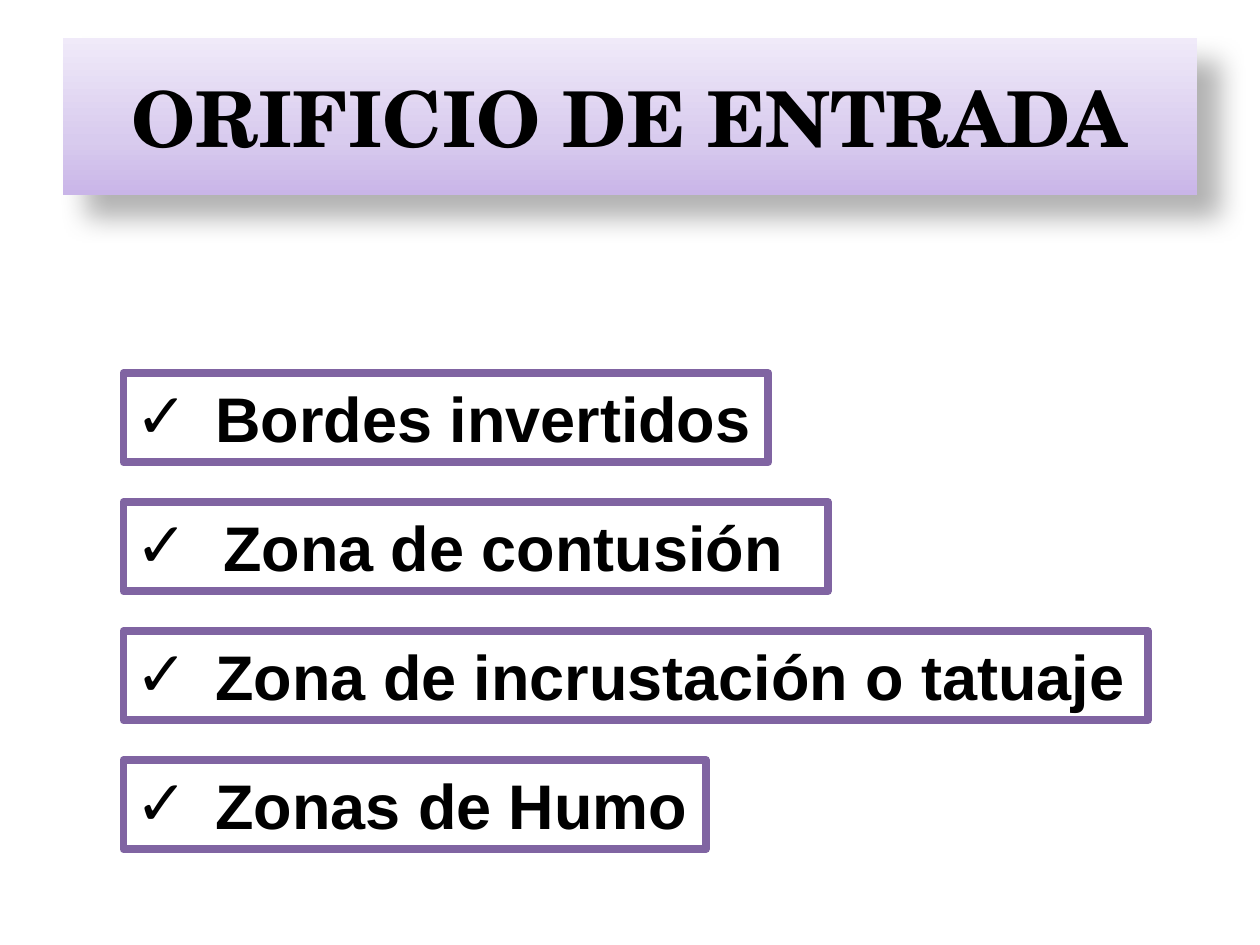
from dataclasses import dataclass

from lxml import etree
from pptx import Presentation
from pptx.dml.color import RGBColor
from pptx.enum.shapes import MSO_SHAPE
from pptx.enum.text import MSO_ANCHOR, PP_ALIGN
from pptx.oxml import parse_xml
from pptx.oxml.ns import qn
from pptx.util import Cm, Pt

RECTANGLE = MSO_SHAPE.RECTANGLE
MIDDLE, TOP = MSO_ANCHOR.MIDDLE, MSO_ANCHOR.TOP
CENTER = PP_ALIGN.CENTER
NAMESPACE = 'xmlns:a="http://schemas.openxmlformats.org/drawingml/2006/main"'


@dataclass(frozen=True)
class Theme:
    ink: str = "000000"
    paper: str = "FFFFFF"
    border: str = "8064A2"
    gradient: tuple = ((0, "C9B5E8"), (35, "D8CBEE"), (100, "F0EAF9"))
    title_font: str = "TeX Gyre Schola"
    body_font: str = "Arial"
    title_size: int = 44
    body_size: int = 36
    border_width: float = 4.5


THEME = Theme()


def write(shape, text, font, size):
    """Put one bold line in the shape and return its paragraph."""
    shape.text_frame.word_wrap = True
    para = shape.text_frame.paragraphs[0]
    para.text = text
    span = para.runs[0]
    span.font.name = font
    span.font.size = Pt(size)
    span.font.bold = True
    span.font.color.rgb = RGBColor.from_string(THEME.ink)
    return para


def add_gradient_and_shadow(shape):
    stops = "".join(
        f'<a:gs pos="{percent * 1000}"><a:srgbClr val="{color}"/></a:gs>'
        for percent, color in THEME.gradient
    )
    gradient = parse_xml(
        f'<a:gradFill {NAMESPACE} rotWithShape="1"><a:gsLst>{stops}</a:gsLst>'
        '<a:lin ang="16200000" scaled="0"/></a:gradFill>'
    )
    properties = shape.fill._xPr
    properties.find(qn("a:prstGeom")).addnext(gradient)

    shape.shadow.inherit = False
    shadow = parse_xml(
        f'<a:outerShdw {NAMESPACE} blurRad="{Pt(15)}" dist="{Pt(18)}" '
        'dir="2700000" algn="tl" rotWithShape="0">'
        f'<a:srgbClr val="{THEME.ink}"><a:alpha val="30000"/></a:srgbClr>'
        "</a:outerShdw>"
    )
    properties.find(qn("a:effectLst")).append(shadow)


def add_title(page, left, top, width, height, text):
    banner = page.shapes.add_shape(
        RECTANGLE, Cm(left), Cm(top), Cm(width), Cm(height))
    add_gradient_and_shadow(banner)
    banner.line.fill.background()
    banner.text_frame.vertical_anchor = MIDDLE
    para = write(banner, text, THEME.title_font, THEME.title_size)
    para.alignment = CENTER


def add_check_bullet(para, indent):
    properties = para._p.get_or_add_pPr()
    properties.set("marL", str(Cm(indent)))
    properties.set("indent", str(-Cm(indent)))
    etree.SubElement(properties, qn("a:buFont"), typeface=THEME.body_font)
    etree.SubElement(properties, qn("a:buChar"), char="✓")


def add_findings(page, left, top, height, pitch, findings):
    """Stack framed check-mark lines, each as wide as its wording needs."""
    for row, (text, width, indent) in enumerate(findings):
        box = page.shapes.add_textbox(
            Cm(left), Cm(top + row * pitch), Cm(width), Cm(height))
        box.fill.solid()
        box.fill.fore_color.rgb = RGBColor.from_string(THEME.paper)
        box.line.color.rgb = RGBColor.from_string(THEME.border)
        box.line.width = Pt(THEME.border_width)
        box.text_frame.vertical_anchor = TOP
        para = write(box, text, THEME.body_font, THEME.body_size)
        add_check_bullet(para, indent)


def main():
    deck = Presentation()
    deck.slide_width, deck.slide_height = Cm(25.4), Cm(19.05)
    page = deck.slides.add_slide(deck.slide_layouts[6])

    # Title banner
    add_title(page, 1.27, 0.76, 22.86, 3.18, "ORIFICIO DE ENTRADA")

    # Findings: wording, box width, text indent
    add_findings(page, left=2.49, top=7.52, height=1.8, pitch=2.6, findings=(
        ("Bordes invertidos", 13.0, 1.6),
        ("Zona de contusión", 14.2, 1.76),
        ("Zona de incrustación o tatuaje", 20.65, 1.6),
        ("Zonas de Humo", 11.74, 1.6),
    ))

    deck.save("out.pptx")


if __name__ == "__main__":
    main()
